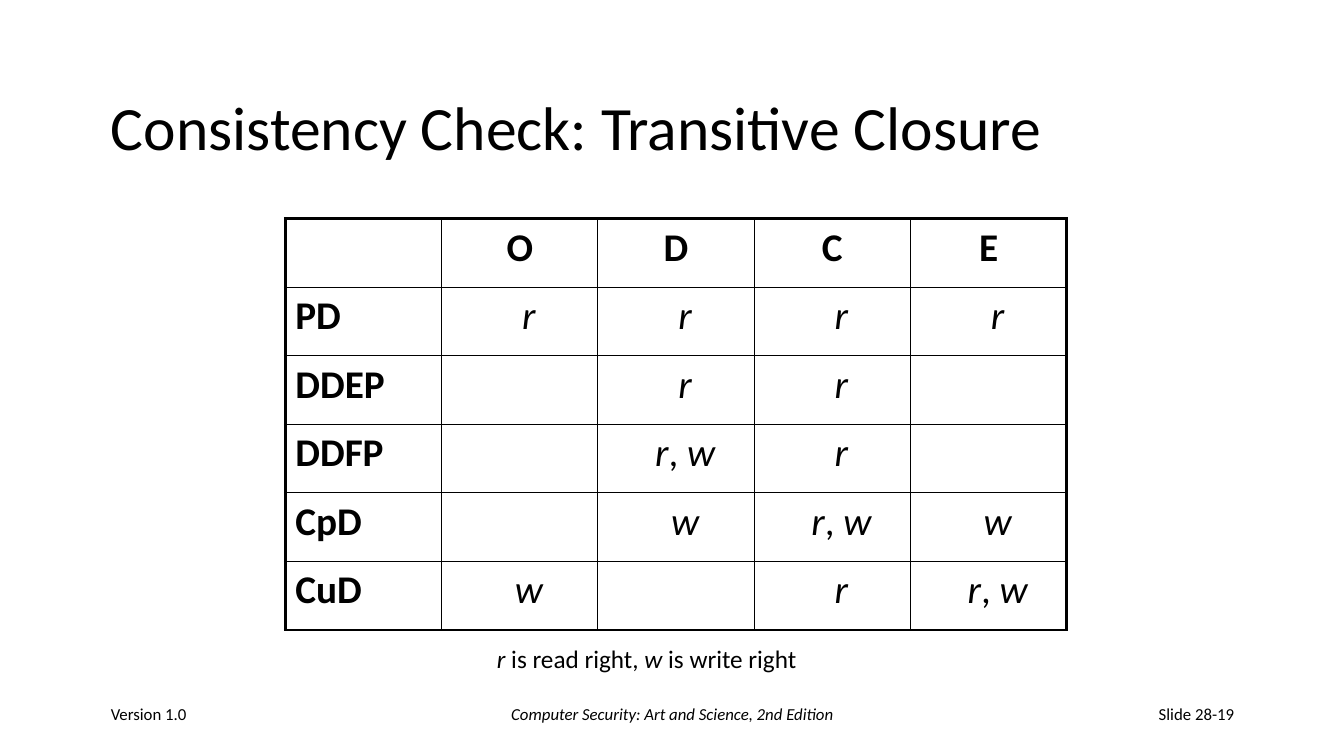
import pptx
import pptx.dml.color
import pptx.enum.text
import pptx.oxml
import pptx.oxml.ns
import pptx.util
from dataclasses import dataclass

Inches = pptx.util.Inches
Align = pptx.enum.text.PP_ALIGN
Anchor = pptx.enum.text.MSO_ANCHOR


@dataclass(frozen=True)
class Theme:
    font: str = "Calibri"
    ink: str = "000000"
    title: int = 44
    table: int = 28
    note: int = 18
    footer: int = 12
    inner_line: float = 1
    outer_line: float = 2.25


theme = Theme()


def write(frame, text, size, bold=False, align=Align.LEFT, line_spacing=None):
    """Fill the first paragraph; stretches between asterisks become italic."""
    paragraph = frame.paragraphs[0]
    paragraph.alignment = align
    paragraph.line_spacing = line_spacing
    for index, part in enumerate(text.split("*")):
        if part:
            run = paragraph.add_run()
            run.text = part
            run.font.name = theme.font
            run.font.size = pptx.util.Pt(size)
            run.font.bold = bold
            run.font.italic = index % 2 == 1
            run.font.color.rgb = pptx.dml.color.RGBColor.from_string(theme.ink)


def set_borders(cell, outer_sides):
    properties = cell._tc.get_or_add_tcPr()
    for position, side in enumerate("LRTB"):
        points = theme.outer_line if side in outer_sides else theme.inner_line
        line = pptx.oxml.parse_xml(
            f'<a:ln{side} {pptx.oxml.ns.nsdecls("a")} w="{pptx.util.Pt(points)}">'
            f'<a:solidFill><a:srgbClr val="{theme.ink}"/></a:solidFill></a:ln{side}>'
        )
        properties.insert(position, line)


presentation = pptx.Presentation()
presentation.slide_width = Inches(13.33)
presentation.slide_height = Inches(7.5)
slide = presentation.slides.add_slide(presentation.slide_layouts[5])

# Title
title = slide.shapes.title
title.left, title.top = Inches(1), Inches(0.67)
title.width, title.height = Inches(11.33), Inches(1.25)
title.text_frame.vertical_anchor = Anchor.MIDDLE
write(title.text_frame, "Consistency Check: Transitive Closure", theme.title, line_spacing=0.9)

# Access rights table
rights = [
    ["", "O", "D", "C", "E"],
    ["PD", "*r*", "*r*", "*r*", "*r*"],
    ["DDEP", "", "*r*", "*r*", ""],
    ["DDFP", "", "*r*, *w*", "*r*", ""],
    ["CpD", "", "*w*", "*r*, *w*", "*w*"],
    ["CuD", "*w*", "", "*r*", "*r*, *w*"],
]
last_row, last_column = len(rights) - 1, len(rights[0]) - 1
table = slide.shapes.add_table(
    len(rights), len(rights[0]), Inches(2.83), Inches(2.17), Inches(7.75), Inches(4.08)
).table
table.first_row = False
table.horz_banding = False

for row, entries in enumerate(rights):
    for column, entry in enumerate(entries):
        cell = table.cell(row, column)
        cell.fill.background()
        edges = {"L": column == 0, "R": column == last_column, "T": row == 0, "B": row == last_row}
        set_borders(cell, [side for side, is_outer in edges.items() if is_outer])
        heading = row == 0 or column == 0
        if not heading:
            cell.margin_left = Inches(0.28)
        write(cell.text_frame, entry, theme.table, bold=heading,
              align=Align.CENTER if column else Align.LEFT)

# Legend under the table
legend = slide.shapes.add_textbox(Inches(4.83), Inches(6.33), Inches(3.21), Inches(0.4))
legend.text_frame.word_wrap = False
legend.text_frame.auto_size = pptx.enum.text.MSO_AUTO_SIZE.SHAPE_TO_FIT_TEXT
write(legend.text_frame, "*r* is read right, *w* is write right", theme.note)

# Footer
footers = [
    ("Version 1.0", 1, 2.78, Align.LEFT),
    ("*Computer Security: Art and Science, 2nd Edition*", 4.56, 4.22, Align.CENTER),
    ("Slide 28-19", 9.56, 2.78, Align.RIGHT),
]
for text, left, width, align in footers:
    footer = slide.shapes.add_textbox(Inches(left), Inches(6.83), Inches(width), Inches(0.5))
    footer.text_frame.word_wrap = True
    footer.text_frame.vertical_anchor = Anchor.MIDDLE
    write(footer.text_frame, text, theme.footer, align=align)

presentation.save("out.pptx")
